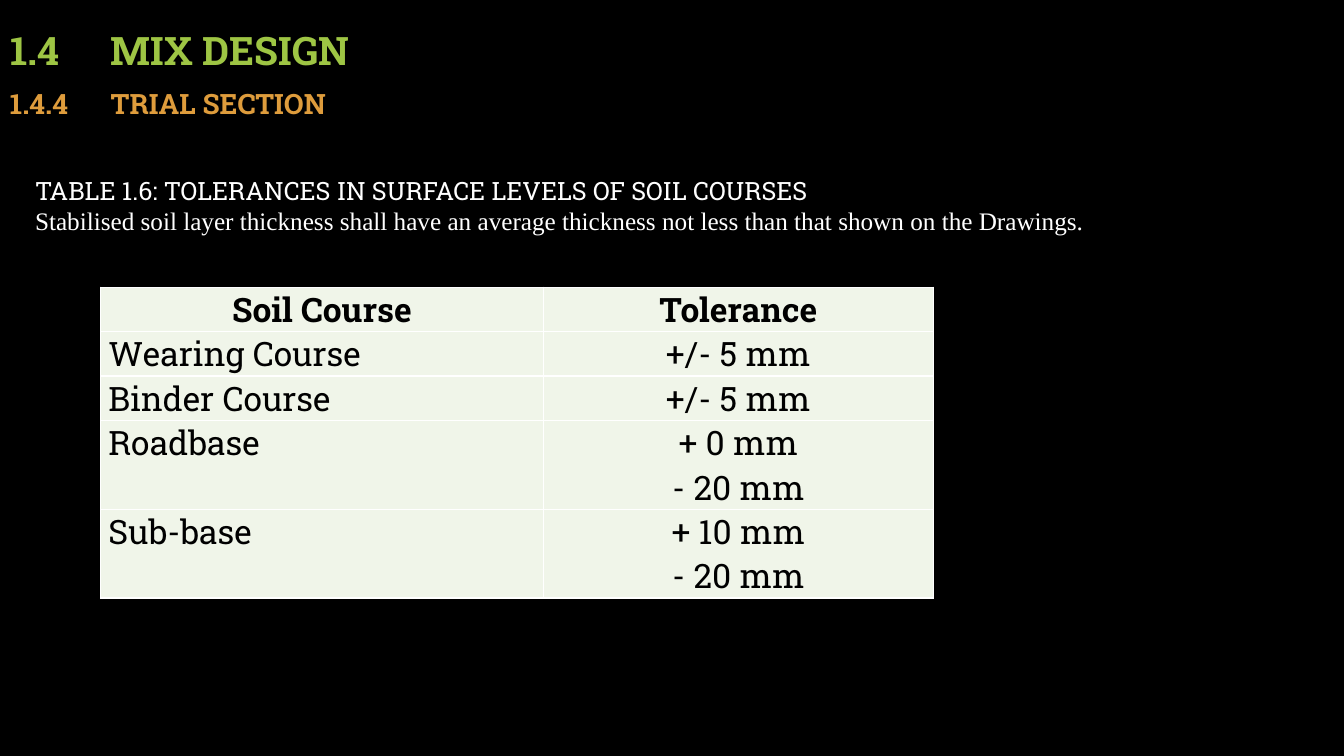
"""Build the trial section slide with its table of surface level tolerances."""
from dataclasses import dataclass

from lxml import etree
from pptx import Presentation
from pptx import util as u
from pptx.dml.color import RGBColor
from pptx.enum import text
from pptx.oxml import ns


@dataclass(frozen=True)
class Theme:
    background: str = "000000"
    green: str = "9EC544"
    orange: str = "DE9C3C"
    white: str = "FFFFFF"
    black: str = "000000"
    cell: str = "F0F5E9"
    slab: str = "Roboto Slab"
    serif: str = "Times New Roman"
    title_size: int = 28
    subtitle_size: int = 20
    caption_size: int = 18
    table_size: int = 24


theme = Theme()
align = text.PP_ALIGN


def format_paragraph(paragraph, size, color, font=theme.slab, bold=False, alignment=align.LEFT):
    paragraph.alignment = alignment
    for run in paragraph.runs:
        run.font.size = u.Pt(size)
        run.font.name = font
        run.font.bold = bold
        run.font.color.rgb = RGBColor.from_string(color)


def add_border(cell, side):
    properties = cell._tc.get_or_add_tcPr()
    line = etree.SubElement(properties, ns.qn(f"a:{side}"), w=str(u.Pt(1)))
    fill = etree.SubElement(line, ns.qn("a:solidFill"))
    etree.SubElement(fill, ns.qn("a:srgbClr"), val=theme.white)


presentation = Presentation()
presentation.slide_width = u.Pt(960)
presentation.slide_height = u.Pt(540)
slide = presentation.slides.add_slide(presentation.slide_layouts[5])
slide.background.fill.solid()
slide.background.fill.fore_color.rgb = RGBColor.from_string(theme.background)

title = slide.shapes.title
subtitle = slide.shapes.add_textbox(0, 0, 0, 0)
headings = [
    (title, "1.4\tMIX DESIGN", 0, theme.title_size, theme.green),
    (subtitle, "1.4.4\tTRIAL SECTION", 37.5, theme.subtitle_size, theme.orange),
]
for shape, wording, top, size, color in headings:
    shape.left, shape.top = u.Pt(0), u.Pt(top)
    shape.width, shape.height = u.Pt(815), u.Pt(75.6)
    frame = shape.text_frame
    frame.text = wording
    frame.word_wrap = True
    frame.auto_size = text.MSO_AUTO_SIZE.NONE
    frame.vertical_anchor = text.MSO_ANCHOR.MIDDLE
    paragraph = frame.paragraphs[0]
    paragraph.line_spacing = 0.9
    format_paragraph(paragraph, size, color, bold=True)
    tabs = etree.SubElement(paragraph._p.get_or_add_pPr(), ns.qn("a:tabLst"))
    etree.SubElement(tabs, ns.qn("a:tab"), pos=str(u.Pt(72)), algn="l")

tolerances = [
    ("Soil Course", "Tolerance"),
    ("Wearing Course", "+/- 5 mm"),
    ("Binder Course", "+/- 5 mm"),
    ("Roadbase", "+ 0 mm\n- 20 mm"),
    ("Sub-base", "+ 10 mm\n- 20 mm"),
]
line_height = 18.72
table_shape = slide.shapes.add_table(
    len(tolerances), 2, u.Pt(72), u.Pt(205.2), u.Pt(594.72), u.Pt(201.6))
table = table_shape.table
for column, width in zip(table.columns, (316.08, 278.64)):
    column.width = u.Pt(width)
for row_index, values in enumerate(tolerances):
    lines = values[1].count("\n") + 1
    table.rows[row_index].height = u.Pt(line_height * lines)
    is_header = row_index == 0
    for column_index, value in enumerate(values):
        cell = table.cell(row_index, column_index)
        cell.text_frame.text = value
        cell.margin_left = cell.margin_right = u.Pt(5.4)
        cell.margin_top = cell.margin_bottom = 0
        centred = is_header or column_index == 1
        for paragraph in cell.text_frame.paragraphs:
            format_paragraph(paragraph, theme.table_size, theme.black, bold=is_header,
                             alignment=align.CENTER if centred else align.JUSTIFY)
        for side in ("lnL", "lnR", "lnT", "lnB"):
            add_border(cell, side)
        cell.fill.solid()
        cell.fill.fore_color.rgb = RGBColor.from_string(theme.cell)
table_shape.height = u.Pt(201.6)

caption = slide.shapes.add_textbox(u.Pt(18), u.Pt(121.7), u.Pt(885.6), u.Pt(51))
frame = caption.text_frame
frame.word_wrap = True
frame.auto_size = text.MSO_AUTO_SIZE.SHAPE_TO_FIT_TEXT
frame.text = (
    "TABLE 1.6: TOLERANCES IN SURFACE LEVELS OF SOIL COURSES\n"
    "Stabilised soil layer thickness shall have an average thickness "
    "not less than that shown on the Drawings."
)
heading, note = frame.paragraphs
format_paragraph(heading, theme.caption_size, theme.white)
format_paragraph(note, theme.caption_size, theme.white, font=theme.serif, alignment=align.JUSTIFY)

presentation.save("out.pptx")
